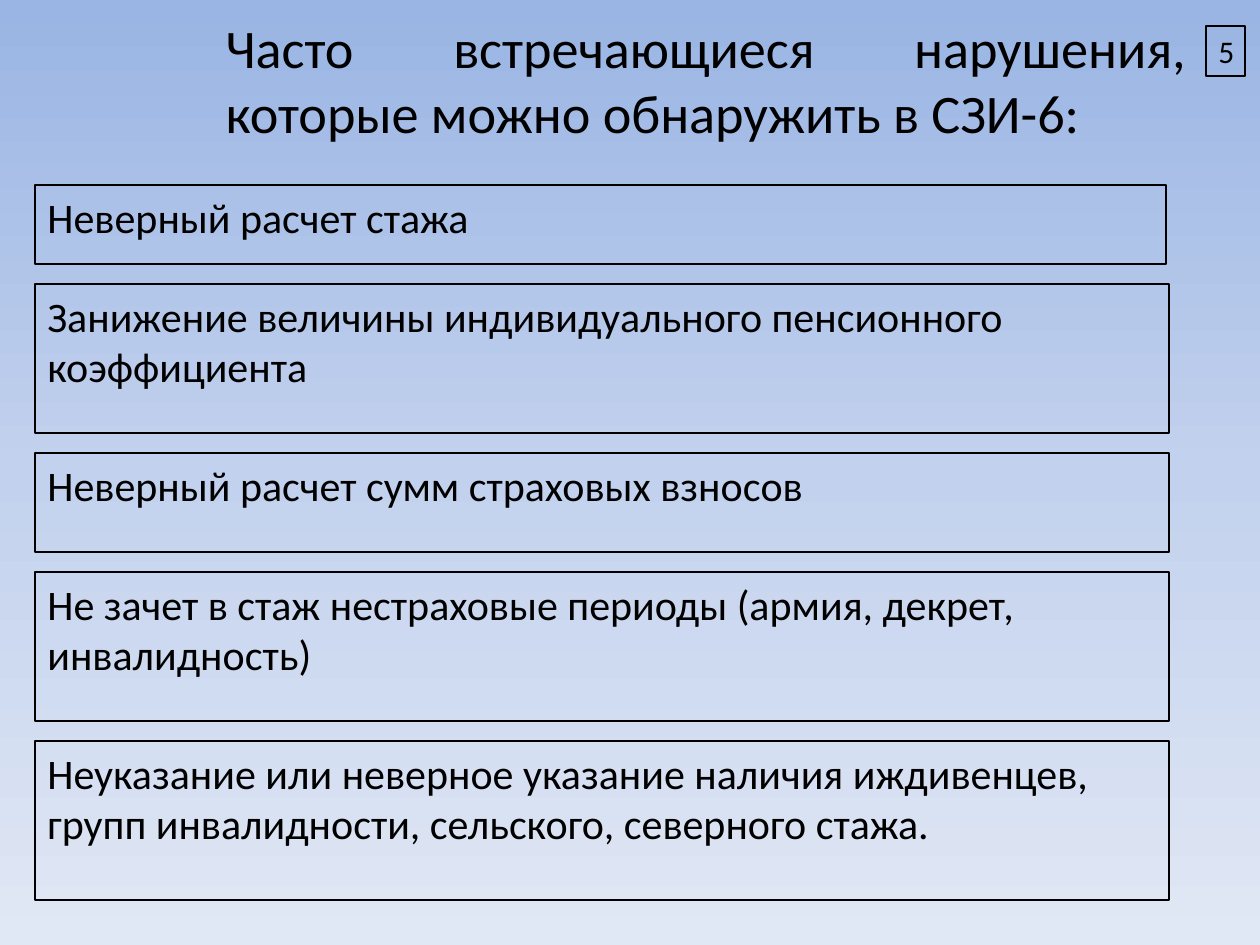
from copy import deepcopy
from dataclasses import dataclass

from pptx import Presentation
from pptx import util as u
from pptx.dml.color import RGBColor
from pptx.enum import shapes, text

PX = u.Inches(1) // 126


@dataclass(frozen=True)
class Theme:
    font: str = "Calibri"
    ink: RGBColor = RGBColor(0, 0, 0)
    gradient: tuple = ((0, "9AB5E4"), (0.5, "C2D1ED"), (1, "E1E8F5"))
    title_size: float = 31
    body_size: float = 24
    number_size: float = 18


@dataclass(frozen=True)
class Violation:
    wording: str
    height: int
    width: int = 1134


THEME = Theme()
LEFT, FIRST_TOP, GAP = 35, 185, 20
VIOLATIONS = (
    Violation("Неверный расчет стажа", 79, 1131),
    Violation("Занижение величины индивидуального пенсионного коэффициента", 149),
    Violation("Неверный расчет сумм страховых взносов", 99),
    Violation("Не зачет в стаж нестраховые периоды (армия, декрет, инвалидность)", 149),
    Violation("Неуказание или неверное указание наличия иждивенцев, "
              "групп инвалидности, сельского, северного стажа.", 159),
)


def paint_background(slide) -> None:
    """Fill the background with the theme gradient, running downwards."""
    fill = slide.background.fill
    fill.gradient()
    fill.gradient_angle = 270
    stop_list = fill._fill._gradFill.gsLst
    stop_list.insert(1, deepcopy(stop_list[0]))
    for stop, (position, colour) in zip(fill.gradient_stops, THEME.gradient):
        stop.position = position
        stop.color.rgb = RGBColor.from_string(colour)


def write_text(shape, wording: str, *, size: float, align=text.PP_ALIGN.LEFT,
               anchor=text.MSO_ANCHOR.TOP, space_before: float = 0) -> None:
    frame = shape.text_frame
    frame.word_wrap = True
    frame.auto_size = text.MSO_AUTO_SIZE.NONE
    frame.vertical_anchor = anchor
    paragraph = frame.paragraphs[0]
    paragraph.alignment = align
    paragraph.space_before = u.Pt(space_before)
    run = paragraph.add_run()
    run.text = wording
    run.font.name = THEME.font
    run.font.size = u.Pt(size)
    run.font.color.rgb = THEME.ink


def place(shape, left: int, top: int, width: int, height: int) -> None:
    shape.left, shape.top = left * PX, top * PX
    shape.width, shape.height = width * PX, height * PX


def add_frame(slide, left: int, top: int, width: int, height: int):
    """Add an unfilled rectangle with a thin outline."""
    shape = slide.shapes.add_shape(shapes.MSO_SHAPE.RECTANGLE, 0, 0, 0, 0)
    place(shape, left, top, width, height)
    shape.shadow.inherit = False
    shape.fill.background()
    shape.line.color.rgb = THEME.ink
    shape.line.width = u.Pt(0.75)
    return shape


def main() -> None:
    presentation = Presentation()
    presentation.slide_width, presentation.slide_height = 1260 * PX, 945 * PX
    slide = presentation.slides.add_slide(presentation.slide_layouts.get_by_name("Title Only"))
    paint_background(slide)

    title = slide.shapes.title
    place(title, 213, 0, 985, 158)
    write_text(title, "Часто встречающиеся нарушения, которые можно обнаружить в СЗИ-6:",
               size=THEME.title_size, align=text.PP_ALIGN.JUSTIFY,
               anchor=text.MSO_ANCHOR.MIDDLE)

    number = add_frame(slide, 1206, 26, 39, 50)
    write_text(number, "5", size=THEME.number_size)

    top = FIRST_TOP
    for violation in VIOLATIONS:
        box = add_frame(slide, LEFT, top, violation.width, violation.height)
        write_text(box, violation.wording, size=THEME.body_size, space_before=2)
        top += violation.height + GAP

    presentation.save("out.pptx")


if __name__ == "__main__":
    main()
